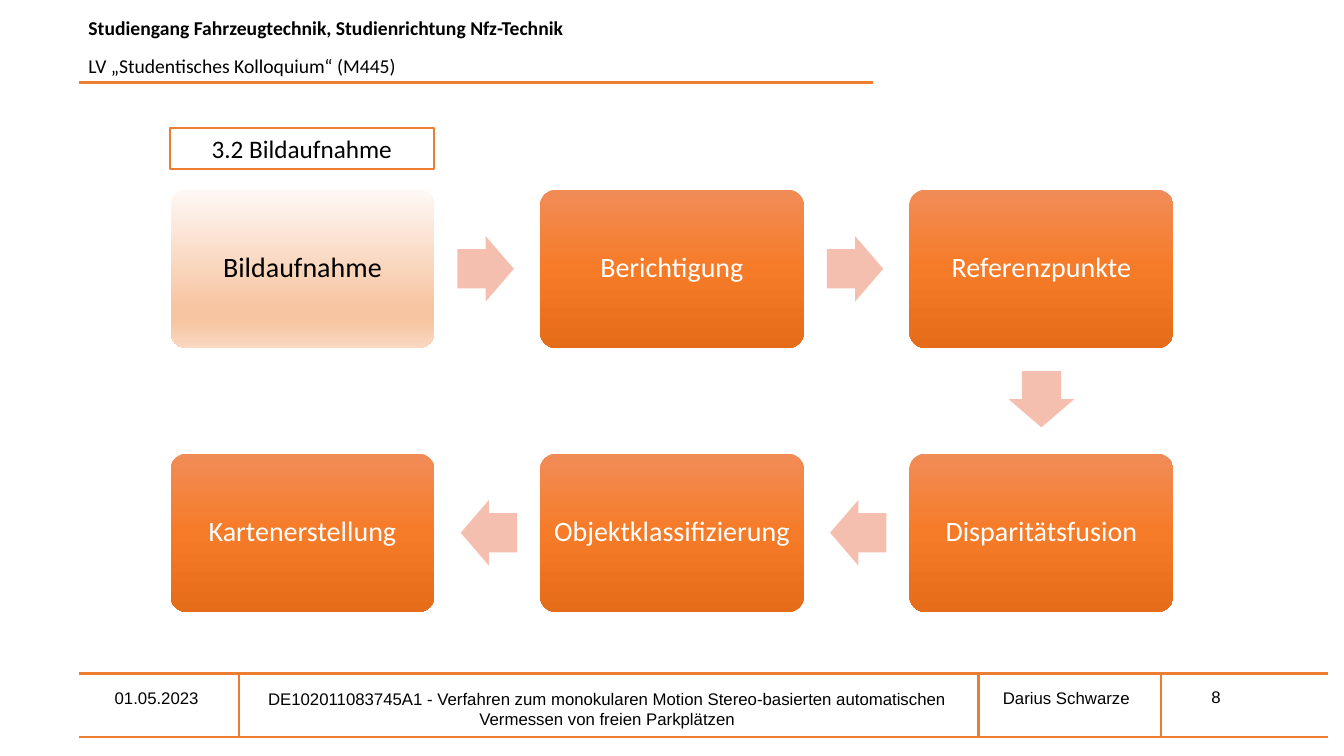
from lxml import etree
from pptx import Presentation
from pptx.dml.color import RGBColor
from pptx.enum.shapes import MSO_CONNECTOR, MSO_SHAPE
from pptx.enum.text import MSO_ANCHOR, MSO_AUTO_SIZE, PP_ALIGN
from pptx.oxml.ns import qn
from pptx.util import Cm, Pt

STRAIGHT = MSO_CONNECTOR.STRAIGHT
ROUNDED, ARROW = MSO_SHAPE.ROUNDED_RECTANGLE, MSO_SHAPE.RIGHT_ARROW
LEFT, CENTER = PP_ALIGN.LEFT, PP_ALIGN.CENTER
TOP, MIDDLE = MSO_ANCHOR.TOP, MSO_ANCHOR.MIDDLE
NO_AUTOFIT = MSO_AUTO_SIZE.NONE

COLORS = {
    "black": "000000",
    "white": "FFFFFF",
    "accent": "ED7D31",
    "arrow": "F4BFAE",
}
ACTIVE_STOPS = [(0, "FEF8F5"), (74, "F7C5A2"), (83, "F7C5A2"), (100, "FAD8C1")]
STEP_STOPS = [(0, "F18C57"), (50, "F67B28"), (100, "E56C19")]

# Step name with its column and row, in the order of the process
STEPS = [
    ("Bildaufnahme", 0, 0),
    ("Berichtigung", 1, 0),
    ("Referenzpunkte", 2, 0),
    ("Disparitätsfusion", 2, 1),
    ("Objektklassifizierung", 1, 1),
    ("Kartenerstellung", 0, 1),
]
STEP_LEFT, STEP_TOP = 4.3, 4.78
STEP_WIDTH, STEP_HEIGHT = 6.65, 3.99
COLUMN_PITCH, ROW_PITCH = 9.31, 6.65
ARROW_LENGTH, ARROW_BREADTH = 1.42, 1.65
ARROW_SETBACK = 0.04

RULES = [
    (1.98, 2.08, 22, 2.08),
    (1.98, 16.97, 33.48, 16.97),
    (1.98, 18.57, 33.48, 18.57),
    (6.02, 16.97, 6.02, 18.57),
    (24.66, 16.95, 24.66, 18.54),
    (29.26, 16.97, 29.26, 18.57),
]
FOOTER = [
    ("01.05.2023", (2.64, 17.2, 8.23, 0.76), LEFT, TOP),
    ("DE102011083745A1 - Verfahren zum monokularen Motion Stereo-basierten "
     "automatischen Vermessen von freien Parkplätzen",
     (5.92, 17.22, 18.77, 1.3), CENTER, TOP),
    ("Darius Schwarze", (24.21, 17.07, 5.33, 1.02), CENTER, MIDDLE),
    ("8", (30.28, 17.17, 2.36, 0.76), LEFT, TOP),
]


def color(name):
    return RGBColor.from_string(COLORS[name])


def add_span(para, text, size, font="Calibri", ink="black", bold=False):
    span = para.add_run()
    span.text = text
    span.font.name = font
    span.font.size = Pt(size)
    span.font.bold = bold
    span.font.color.rgb = color(ink)


def add_text_box(page, place, anchor=TOP):
    frame = page.shapes.add_textbox(*map(Cm, place)).text_frame
    frame.word_wrap = True
    frame.vertical_anchor = anchor
    return frame


def add_rule(page, ends):
    rule = page.shapes.add_connector(STRAIGHT, *map(Cm, ends))
    rule.line.color.rgb = color("accent")
    rule.line.width = Pt(1.5)
    etree.SubElement(rule._element.spPr, qn("a:effectLst"))


def fill_gradient(shape, stops):
    """Fill from top to bottom with (percent, hex colour) stops."""
    shape.fill.gradient()
    shape.fill.gradient_angle = 270
    stop_list = shape._element.spPr.find(qn("a:gradFill")).find(qn("a:gsLst"))
    for old_stop in list(stop_list):
        stop_list.remove(old_stop)
    for percent, value in stops:
        stop = etree.SubElement(stop_list, qn("a:gs"), pos=str(percent * 1000))
        etree.SubElement(stop, qn("a:srgbClr"), val=value)


def step_corner(column, row):
    return STEP_LEFT + column * COLUMN_PITCH, STEP_TOP + row * ROW_PITCH


def add_step(page, name, column, row, active):
    left, top = step_corner(column, row)
    box = page.shapes.add_shape(
        ROUNDED, Cm(left), Cm(top), Cm(STEP_WIDTH), Cm(STEP_HEIGHT))
    box.adjustments[0] = 0.1
    box.shadow.inherit = False
    box.line.fill.background()
    fill_gradient(box, ACTIVE_STOPS if active else STEP_STOPS)
    frame = box.text_frame
    frame.word_wrap = True
    frame.vertical_anchor = MIDDLE
    frame.margin_left = frame.margin_right = Cm(0.2)
    frame.margin_top = frame.margin_bottom = Cm(0.2)
    para = frame.paragraphs[0]
    para.alignment = CENTER
    para.line_spacing = 0.9
    add_span(para, name, 20, ink="black" if active else "white")


def add_arrow(page, start, end):
    """Point from one (column, row) cell to its neighbour."""
    across, down = end[0] - start[0], end[1] - start[1]
    left, top = step_corner((start[0] + end[0]) / 2, (start[1] + end[1]) / 2)
    middle_x = left + STEP_WIDTH / 2 - across * ARROW_SETBACK
    middle_y = top + STEP_HEIGHT / 2 - down * ARROW_SETBACK
    arrow = page.shapes.add_shape(
        ARROW, Cm(middle_x - ARROW_LENGTH / 2), Cm(middle_y - ARROW_BREADTH / 2),
        Cm(ARROW_LENGTH), Cm(ARROW_BREADTH))
    arrow.adjustments[0] = 0.6
    arrow.adjustments[1] = 0.5
    arrow.rotation = 90 if down else 90 - 90 * across
    arrow.shadow.inherit = False
    arrow.fill.solid()
    arrow.fill.fore_color.rgb = color("arrow")
    arrow.line.fill.background()


def add_header(page):
    frame = add_text_box(page, (1.98, 0.28, 22.86, 1.3))
    add_span(frame.paragraphs[0],
             "Studiengang Fahrzeugtechnik, Studienrichtung Nfz-Technik",
             14, bold=True)
    course = frame.add_paragraph()
    course.space_before = Pt(10)
    add_span(course, "LV „Studentisches Kolloquium“ (M445)", 14)


def add_footer(page):
    for text, place, alignment, anchor in FOOTER:
        para = add_text_box(page, place, anchor).paragraphs[0]
        para.alignment = alignment
        add_span(para, text, 12, font="Arial")


def format_title(title):
    title.left, title.top = Cm(4.28), Cm(3.23)
    title.width, title.height = Cm(STEP_WIDTH), Cm(1.02)
    title.fill.solid()
    title.fill.fore_color.rgb = color("white")
    title.line.color.rgb = color("accent")
    title.line.width = Pt(1.5)
    frame = title.text_frame
    frame.auto_size = NO_AUTOFIT
    frame.vertical_anchor = MIDDLE
    para = frame.paragraphs[0]
    para.alignment = CENTER
    add_span(para, "3.2 Bildaufnahme", 18)


def main():
    deck = Presentation()
    deck.slide_width, deck.slide_height = Cm(33.87), Cm(19.05)
    page = deck.slides.add_slide(deck.slide_layouts[5])
    format_title(page.shapes.title)
    add_header(page)
    for ends in RULES:
        add_rule(page, ends)
    add_footer(page)
    for index, (name, column, row) in enumerate(STEPS):
        add_step(page, name, column, row, active=index == 0)
    for start, end in zip(STEPS, STEPS[1:]):
        add_arrow(page, start[1:], end[1:])
    deck.save("out.pptx")


if __name__ == "__main__":
    main()
